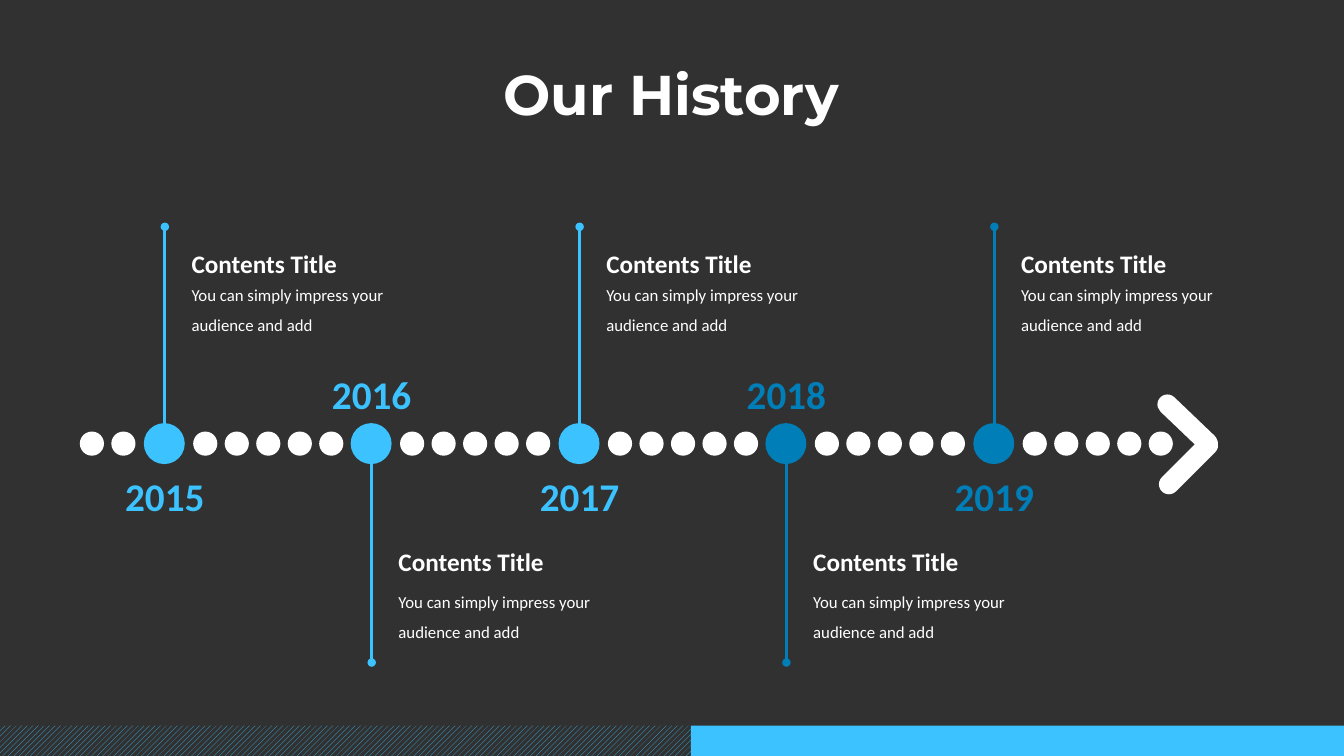
from lxml import etree
from pptx import Presentation, util as u
from pptx.dml.color import RGBColor
from pptx.enum import dml, shapes, text
from pptx.oxml import ns

PX = 9525
DARK = RGBColor(0x31, 0x31, 0x31)
WHITE = RGBColor(0xFF, 0xFF, 0xFF)
SKY = RGBColor(0x3B, 0xC2, 0xFF)
BLUE = RGBColor(0x00, 0x7E, 0xB8)
KIND = shapes.MSO_SHAPE
LEFT, MID = text.PP_ALIGN.LEFT, text.PP_ALIGN.CENTER

deck = Presentation()
deck.slide_width, deck.slide_height = 1280 * PX, 720 * PX
slide = deck.slides.add_slide(deck.slide_layouts[5])
slide.background.fill.solid()
slide.background.fill.fore_color.rgb = DARK


def draw(kind, left, top, width, height, color):
    shape = slide.shapes.add_shape(kind, left * PX, top * PX, width * PX, height * PX)
    shape.shadow.inherit = False
    shape.fill.solid()
    shape.fill.fore_color.rgb = color
    shape.line.fill.background()
    return shape


def write(box, words, size, color, bold, align, space=1.0, font="Calibri"):
    frame = box.text_frame
    frame.word_wrap = True
    para = frame.paragraphs[0]
    para.alignment = align
    para.line_spacing = space
    run = para.add_run()
    run.text = words
    run.font.name = font
    run.font.size = u.Pt(size)
    run.font.bold = bold
    run.font.color.rgb = color


title = slide.shapes.title
title.left, title.top, title.width, title.height = 242 * PX, 45 * PX, 795 * PX, 87 * PX
title.text_frame.auto_size = text.MSO_AUTO_SIZE.NONE
title.text_frame.vertical_anchor = text.MSO_ANCHOR.MIDDLE
write(title, "Our History", 40, WHITE, True, MID, font="Montserrat")

hatch = draw(KIND.RECTANGLE, 0, 691, 658, 29, DARK)
hatch.fill.patterned()
hatch.fill.pattern = dml.MSO_PATTERN.WIDE_UPWARD_DIAGONAL
hatch.fill.fore_color.rgb = SKY
hatch.fill.back_color.rgb = DARK
draw(KIND.RECTANGLE, 658, 691, 622, 29, SKY)

stops = [157 + 395 * i // 2 for i in range(-1, 5)]
years = ["2015", "2016", "2017", "2018", "2019"]
tints = [SKY, SKY, SKY, BLUE, BLUE]

for i, (x, year, tint) in enumerate(zip(stops[1:], years, tints)):
    if i % 2 == 0:
        start, end, head, body, label = 404, 216, 217, 257, 445
    else:
        start, end, head, body, label = 442, 631, 501, 549, 348

    stem = slide.shapes.add_connector(
        shapes.MSO_CONNECTOR.STRAIGHT, x * PX, start * PX, x * PX, end * PX)
    stem.line.color.rgb = tint
    stem.line.width = u.Pt(2)
    etree.SubElement(stem.line._get_or_add_ln(), ns.qn("a:tailEnd"), type="oval")
    etree.SubElement(stem._element.spPr, ns.qn("a:effectLst"))

    for left, top, width, height, words, size, color, bold, align, space in [
        (x + 16, body, 225, 65, "You can simply impress your audience and add",
         12, WHITE, False, LEFT, 1.5),
        (x + 16, head, 277, 49, "Contents Title", 18, WHITE, True, LEFT, 1.5),
        (x - 63, label, 126, 55, year, 28, tint, True, MID, 1.0),
    ]:
        box = slide.shapes.add_textbox(left * PX, top * PX, width * PX, height * PX)
        box.text_frame.auto_size = text.MSO_AUTO_SIZE.SHAPE_TO_FIT_TEXT
        write(box, words, size, color, bold, align, space)

    draw(KIND.OVAL, x - 20, 403, 39, 39, tint)

for i, x in enumerate(stops):
    for k in range(3 if i == 0 else 0, 5):
        draw(KIND.OVAL, x + 27 + 30 * k, 411, 23, 23, WHITE)

for left, top, turn in [(1095, 394, 43.7), (1096, 433, 315)]:
    bar = draw(KIND.ROUNDED_RECTANGLE, left, top, 72, 19, WHITE)
    bar.adjustments[0] = 0.5
    bar.rotation = turn

deck.save("out.pptx")
